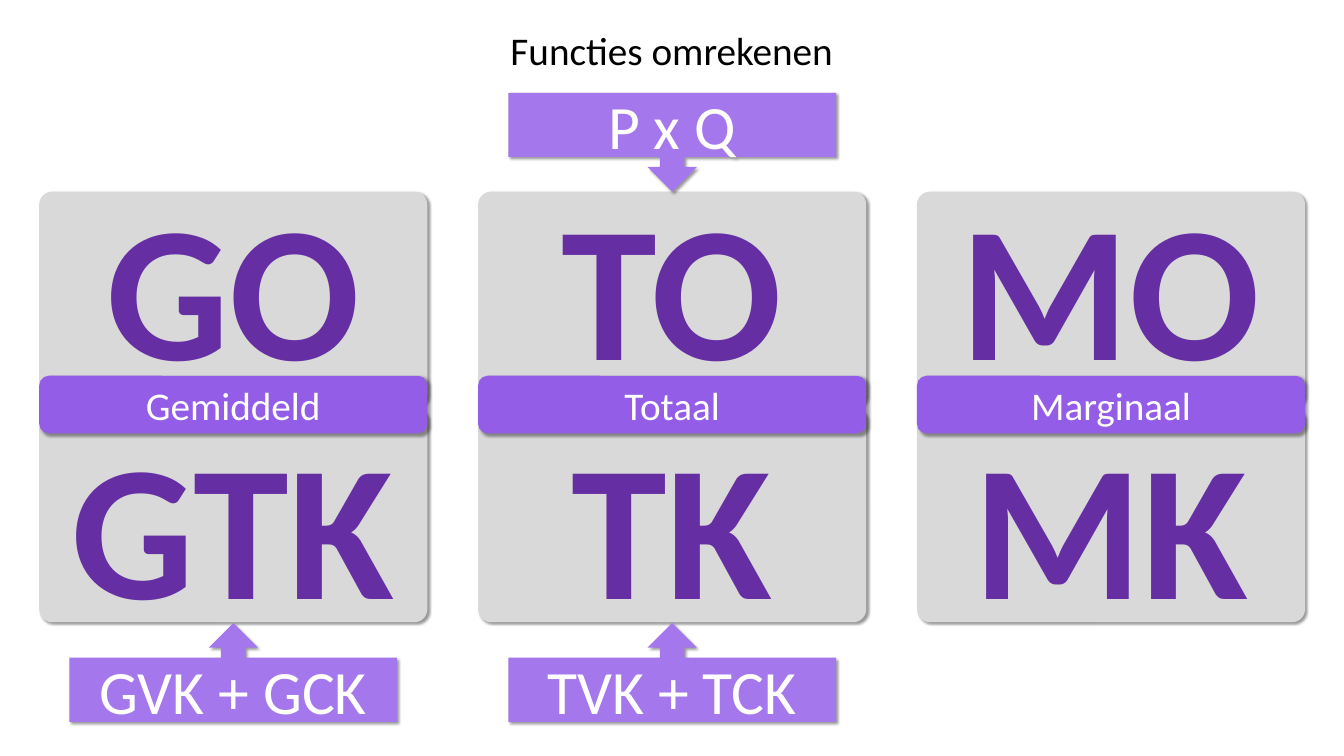
from dataclasses import dataclass

from lxml import etree
from pptx import Presentation
from pptx import util as u
from pptx.dml.color import RGBColor
from pptx.enum import shapes, text
from pptx.oxml import ns


@dataclass(frozen=True)
class Theme:
    """Colours, font and type sizes of the slide."""
    font: str = "Calibri"
    black: str = "000000"
    white: str = "FFFFFF"
    card: str = "D9D9D9"
    abbreviation: str = "652EA3"
    band: str = "945DE8"
    callout: str = "A478EC"
    label_size: int = 28
    formula_size: int = 44
    abbreviation_size: int = 138


def write(frame, words, *, size, color, font, bold=False, anchor=text.MSO_ANCHOR.MIDDLE,
          fit=text.MSO_AUTO_SIZE.NONE):
    """Put centred, formatted words in a text frame."""
    frame.word_wrap = True
    frame.auto_size = fit
    frame.vertical_anchor = anchor
    frame.margin_left = frame.margin_right = u.Cm(0.25)
    frame.margin_top = frame.margin_bottom = u.Cm(0.13)
    paragraph = frame.paragraphs[0]
    paragraph.alignment = text.PP_ALIGN.CENTER
    run = paragraph.add_run()
    run.text = words
    run.font.name = font
    run.font.size = u.Pt(size)
    run.font.bold = bold
    run.font.color.rgb = RGBColor.from_string(color)


def cast_shadow(shape):
    """Give a shape a soft shadow to the lower right."""
    shape.shadow.inherit = False
    effects = shape._element.spPr.find(ns.qn("a:effectLst"))
    outer = etree.SubElement(effects, ns.qn("a:outerShdw"), blurRad="25400", dist="25400",
                             dir="2700000", algn="tl", rotWithShape="0")
    shade = etree.SubElement(outer, ns.qn("a:srgbClr"), val="000000")
    etree.SubElement(shade, ns.qn("a:alpha"), val="40000")


class Board:
    """Style and current slide, with a method per kind of element."""

    def __init__(self, slide, theme):
        """Keep the slide and its theme."""
        self.slide = slide
        self.theme = theme

    def title(self, words, left, top, width, height):
        """Place and fill the title."""
        heading = self.slide.shapes.title
        heading.left, heading.top = u.Cm(left), u.Cm(top)
        heading.width, heading.height = u.Cm(width), u.Cm(height)
        write(heading.text_frame, words, size=self.theme.label_size, color=self.theme.black,
              font=self.theme.font, anchor=text.MSO_ANCHOR.TOP,
              fit=text.MSO_AUTO_SIZE.SHAPE_TO_FIT_TEXT)

    def block(self, kind, fill, left, top, width, height):
        """Draw a filled shape with a shadow and no outline."""
        shape = self.slide.shapes.add_shape(kind, *map(u.Cm, (left, top, width, height)))
        shape.fill.solid()
        shape.fill.fore_color.rgb = RGBColor.from_string(fill)
        shape.line.fill.background()
        cast_shadow(shape)
        return shape

    def card(self, left, top):
        """Draw a grey card."""
        card = self.block(shapes.MSO_SHAPE.ROUNDED_RECTANGLE, self.theme.card,
                          left, top, CARD_WIDTH, CARD_HEIGHT)
        card.adjustments[0] = 0.06

    def abbreviation(self, words, left, top):
        """Write a large abbreviation over a card."""
        box = self.slide.shapes.add_textbox(*map(u.Cm, (left - 0.43, top, 10.62, 6.15)))
        write(box.text_frame, words, size=self.theme.abbreviation_size,
              color=self.theme.abbreviation, font=self.theme.font, bold=True,
              anchor=text.MSO_ANCHOR.TOP, fit=text.MSO_AUTO_SIZE.SHAPE_TO_FIT_TEXT)

    def band(self, words, left):
        """Draw the name of a column between its two cards."""
        band = self.block(shapes.MSO_SHAPE.ROUNDED_RECTANGLE, self.theme.band,
                          left, 9.47, CARD_WIDTH, 1.45)
        write(band.text_frame, words, size=self.theme.label_size, color=self.theme.white,
              font=self.theme.font)

    def callout(self, kind, words, left, top):
        """Draw a formula that points at a card."""
        callout = self.block(kind, self.theme.callout, left + 0.76, top, 8.26, 2.49)
        write(callout.text_frame, words, size=self.theme.formula_size, color=self.theme.white,
              font=self.theme.font)


CARD_WIDTH, CARD_HEIGHT = 9.78, 5.42
CARD_TOPS = (4.83, 10.26)
ABBREVIATION_TOPS = (4.09, 10.11)
COLUMNS = (("Gemiddeld", "GO", "GTK"), ("Totaal", "TO", "TK"), ("Marginaal", "MO", "MK"))
COLUMN_LEFTS = [0.99 + 11.06 * index for index in range(len(COLUMNS))]


def main():
    """Build and save the slide."""
    deck = Presentation()
    deck.slide_width, deck.slide_height = u.Cm(33.87), u.Cm(19.05)
    board = Board(deck.slides.add_slide(deck.slide_layouts[5]), Theme())
    board.title("Functies omrekenen", 5.94, 0.53, 21.97, 1.45)

    for left in COLUMN_LEFTS:
        for top in CARD_TOPS:
            board.card(left, top)
    for left, (name, *abbreviations) in zip(COLUMN_LEFTS, COLUMNS):
        for abbreviation, top in zip(abbreviations, ABBREVIATION_TOPS):
            board.abbreviation(abbreviation, left, top)
        board.band(name, left)

    average, total, _ = COLUMN_LEFTS
    up, down = shapes.MSO_SHAPE.UP_ARROW_CALLOUT, shapes.MSO_SHAPE.DOWN_ARROW_CALLOUT
    board.callout(up, "GVK + GCK", average, 15.7)
    board.callout(up, "TVK + TCK", total, 15.7)
    board.callout(down, "P x Q", total, 2.34)
    deck.save("out.pptx")


if __name__ == "__main__":
    main()
